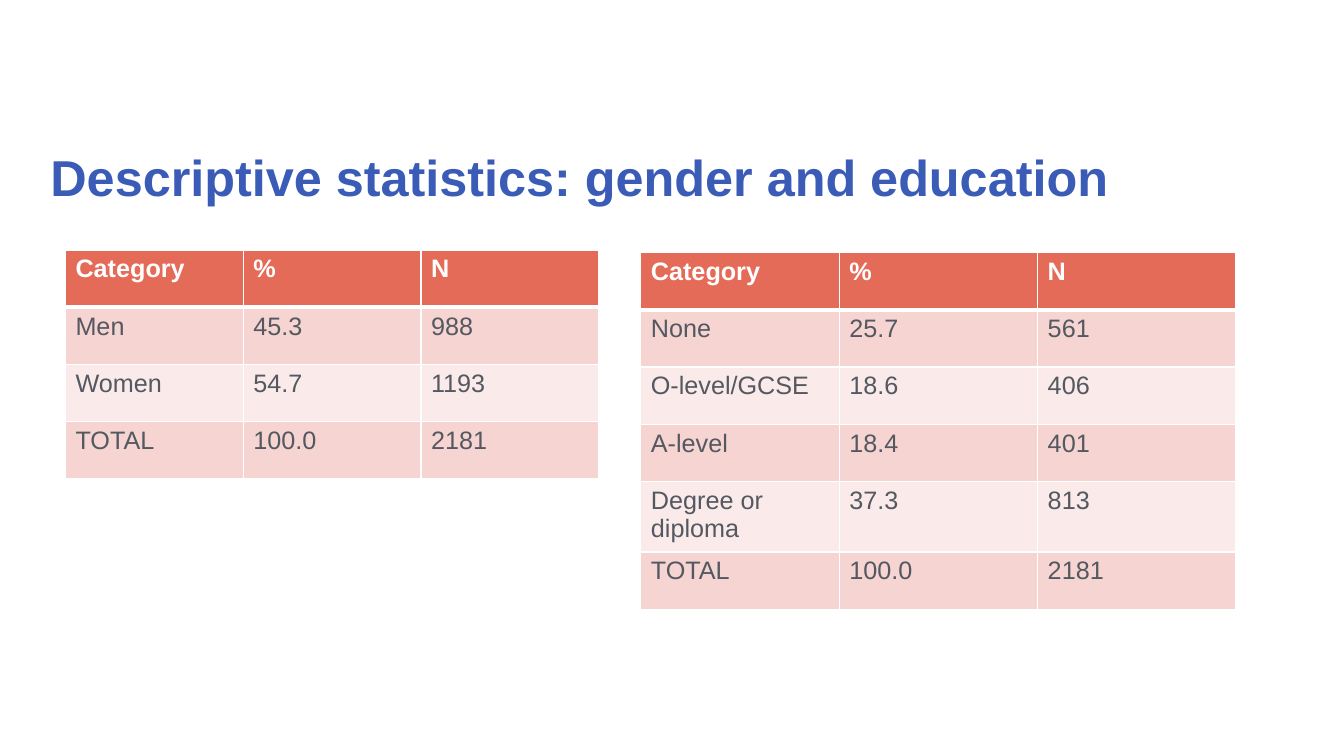
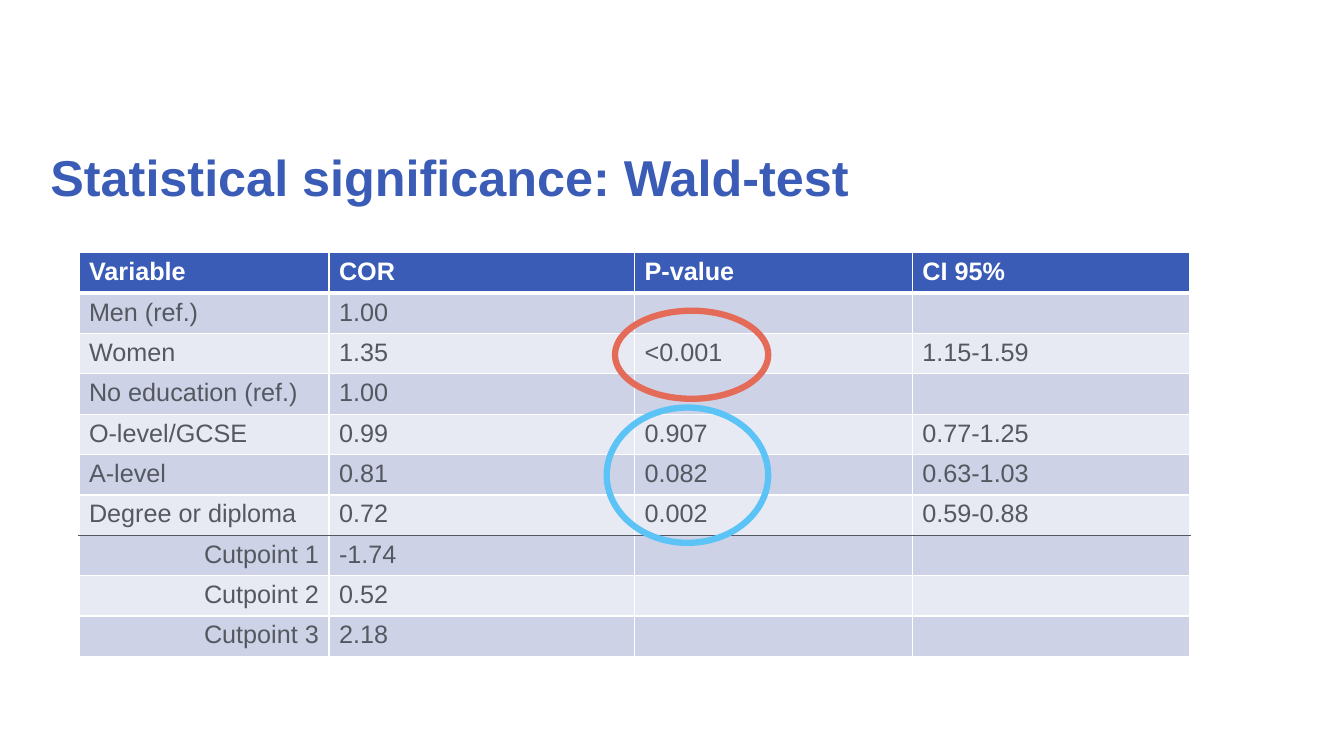
from dataclasses import dataclass
from typing import NamedTuple

from lxml.etree import SubElement
from pptx import Presentation
from pptx.dml.color import RGBColor
from pptx.enum.shapes import MSO_SHAPE
from pptx.enum.text import MSO_ANCHOR, PP_ALIGN
from pptx.oxml.ns import qn
from pptx.util import Cm, Pt


class Banding(NamedTuple):
    """Fills of a table: header, odd rows and even rows."""
    header: str
    odd: str
    even: str


@dataclass(frozen=True)
class Theme:
    """Colours, font and type sizes of the deck."""
    font: str = "Arial"
    title_size: int = 36
    table_size: int = 18
    blue: str = "3A5CB7"
    coral: str = "E56B59"
    sky: str = "5BC3F5"
    grey: str = "545860"
    white: str = "FFFFFF"
    coral_bands: Banding = Banding("E56B59", "F5D4D1", "FAEBEA")
    blue_bands: Banding = Banding("3A5CB7", "CED2E6", "E8EAF3")
    grid_width: float = 1
    header_rule_width: float = 3
    ring_width: float = 4.5


class Deck:
    """Adds styled elements to the current slide."""

    def __init__(self, theme):
        """Start an empty widescreen presentation."""
        self.theme = theme
        self.presentation = Presentation()
        self.presentation.slide_width = Cm(33.87)
        self.presentation.slide_height = Cm(19.05)
        self.slide = None

    def add_slide(self, title):
        """Open a new slide with its title."""
        self.slide = self.presentation.slides.add_slide(self.presentation.slide_layouts[6])
        heading = self.slide.shapes.add_textbox(Cm(1.02), Cm(2.7), Cm(31.85), Cm(3.68))
        frame = heading.text_frame
        frame.word_wrap = True
        frame.vertical_anchor = MSO_ANCHOR.MIDDLE
        frame.text = title
        frame.paragraphs[0].line_spacing = 0.9
        self.format_text(frame.paragraphs[0], self.theme.title_size, self.theme.blue, True)

    def format_text(self, paragraph, size, color, bold=False):
        """Set the font of a paragraph's runs."""
        for run in paragraph.runs:
            run.font.name = self.theme.font
            run.font.size = Pt(size)
            run.font.bold = bold
            run.font.color.rgb = RGBColor.from_string(color)

    def add_borders(self, cell, top, bottom):
        """Draw the four borders of a cell."""
        side = (self.theme.white, self.theme.grid_width)
        properties = cell._tc.get_or_add_tcPr()
        for tag, (color, width) in zip(("lnL", "lnR", "lnT", "lnB"), (side, side, top, bottom)):
            border = SubElement(properties, qn(f"a:{tag}"), w=str(Pt(width)))
            fill = SubElement(border, qn("a:solidFill"))
            SubElement(fill, qn("a:srgbClr"), val=color)

    def add_table(self, left, top, widths, row_height, rows, bands, summary_row=None):
        """Add a banded table, with a rule above the summary rows if any."""
        theme = self.theme
        table = self.slide.shapes.add_table(
            len(rows), len(widths), Cm(left), Cm(top),
            Cm(sum(widths)), Cm(row_height * len(rows))).table
        for column, width in zip(table.columns, widths):
            column.width = Cm(width)
        edges = [(theme.white, theme.grid_width)] * (len(rows) + 1)
        edges[1] = (theme.white, theme.header_rule_width)
        if summary_row is not None:
            edges[summary_row] = (theme.grey, theme.grid_width)
        for r, values in enumerate(rows):
            table.rows[r].height = Cm(row_height)
            is_header = r == 0
            band = bands.header if is_header else bands.odd if r % 2 else bands.even
            for c, value in enumerate(values):
                cell = table.cell(r, c)
                self.add_borders(cell, edges[r], edges[r + 1])
                cell.fill.solid()
                cell.fill.fore_color.rgb = RGBColor.from_string(band)
                cell.text_frame.text = value
                paragraph = cell.text_frame.paragraphs[0]
                if c == 0 and summary_row is not None and r >= summary_row:
                    paragraph.alignment = PP_ALIGN.RIGHT
                self.format_text(paragraph, theme.table_size,
                                 theme.white if is_header else theme.grey, is_header)

    def add_ring(self, left, top, width, height, color):
        """Circle some values with an unfilled ellipse."""
        ring = self.slide.shapes.add_shape(
            MSO_SHAPE.OVAL, Cm(left), Cm(top), Cm(width), Cm(height))
        ring.shadow.inherit = False
        ring.fill.background()
        ring.line.color.rgb = RGBColor.from_string(color)
        ring.line.width = Pt(self.theme.ring_width)


def main():
    """Build and save the two slides."""
    theme = Theme()
    deck = Deck(theme)

    deck.add_slide("Descriptive statistics: gender and education")
    header = ("Category", "%", "N")
    total = ("TOTAL", "100.0", "2181")
    gender = [header, ("Men", "45.3", "988"), ("Women", "54.7", "1193"), total]
    education = [
        header,
        ("None", "25.7", "561"),
        ("O-level/GCSE", "18.6", "406"),
        ("A-level", "18.4", "401"),
        ("Degree or diploma", "37.3", "813"),
        total,
    ]
    deck.add_table(1.65, 6.3, [4.48] * 3, 1.44, gender, theme.coral_bands)
    deck.add_table(16.15, 6.37, [5] * 3, 1.44, education, theme.coral_bands)

    deck.add_slide("Statistical significance: Wald-test")
    wald_test = [
        ("Variable", "COR", "P-value", "CI 95%"),
        ("Men (ref.)", "1.00", "", ""),
        ("Women", "1.35", "<0.001", "1.15-1.59"),
        ("No education (ref.)", "1.00", "", ""),
        ("O-level/GCSE", "0.99", "0.907", "0.77-1.25"),
        ("A-level", "0.81", "0.082", "0.63-1.03"),
        ("Degree or diploma", "0.72", "0.002", "0.59-0.88"),
        ("Cutpoint 1", "-1.74", "", ""),
        ("Cutpoint 2", "0.52", "", ""),
        ("Cutpoint 3", "2.18", "", ""),
    ]
    deck.add_table(1.99, 6.37, [6.3, 7.7, 7, 7], 0.99, wald_test, theme.blue_bands, summary_row=7)
    deck.add_ring(15.5, 7.83, 3.86, 2.22, theme.coral)
    deck.add_ring(15.29, 10.27, 4.07, 3.41, theme.sky)

    deck.presentation.save("out.pptx")


if __name__ == "__main__":
    main()
